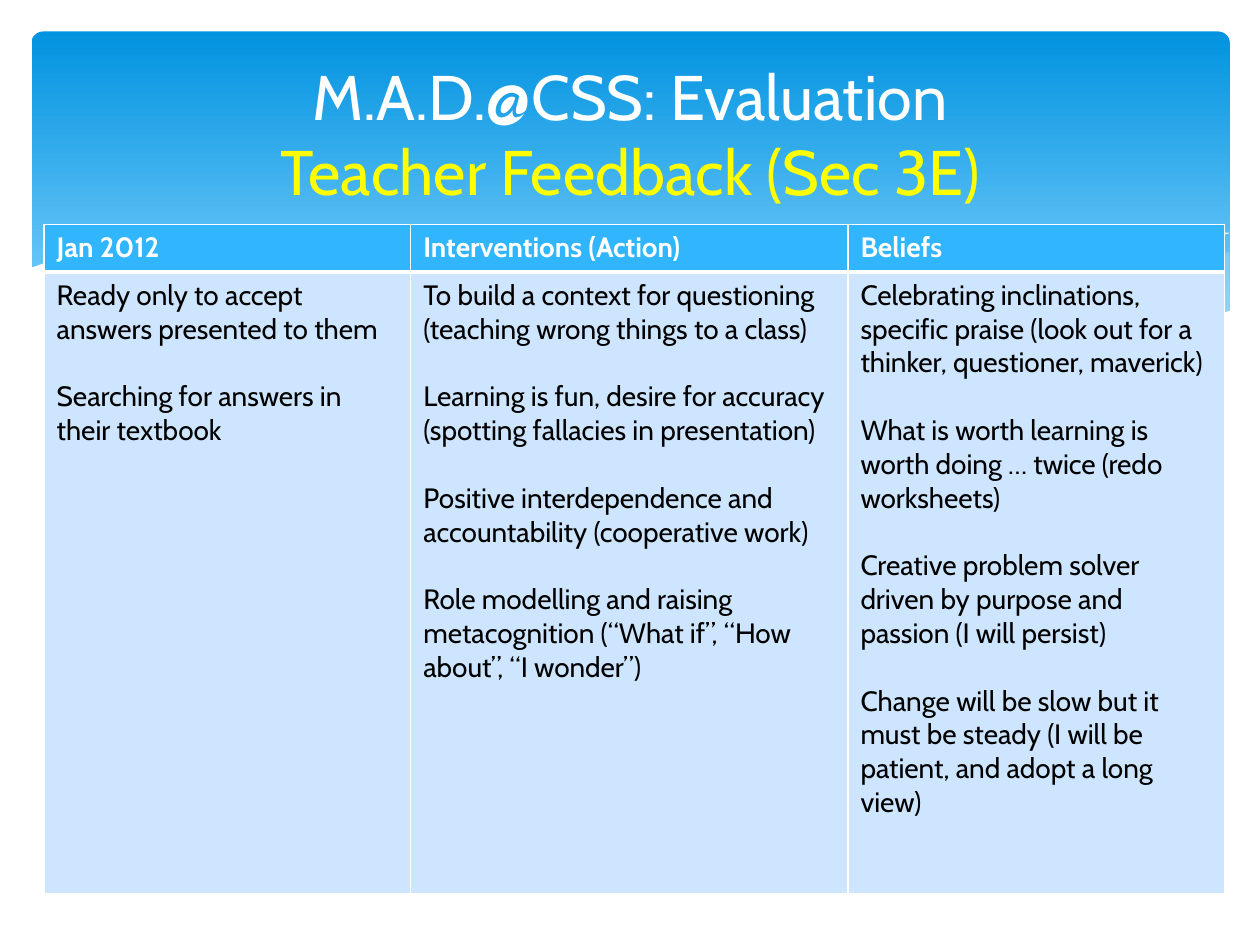
from lxml.etree import SubElement
from pptx import Presentation
from pptx.dml.color import RGBColor
from pptx.enum.shapes import MSO_SHAPE
from pptx.enum.text import MSO_ANCHOR, PP_ALIGN
from pptx.oxml import parse_xml
from pptx.oxml.ns import nsdecls, qn
from pptx.util import Inches, Pt

FONT = "Cabin"
WHITE, BLACK, PALE = "FFFFFF", "000000", "C6E7FC"

# Each wave: box on the slide, fill, opacity in percent, points in percent of the box.
# Waves without a fill are open white lines.
WAVES = [
    ((6.61, 2, 3.15, 0.78), PALE, 29,
     [(100, 0), (73, 21), (46, 47), (0, 83), (22, 94), (43, 99), (58, 99),
      (75, 90), (87, 79), (100, 60)]),
    ((2.86, 1.86, 6.06, 0.93), PALE, 40,
     [(100, 94), (81, 73), (57, 39), (40, 15), (26, 3), (15, 0), (0, 5),
      (13, 18), (27, 39), (46, 67), (60, 84), (74, 96), (88, 100)]),
    ((3.09, 1.87, 5.98, 0.85), None, 100,
     [(0, 9), (9, 2), (18, 0), (30, 4), (46, 15), (60, 31), (75, 54), (100, 100)]),
    ((6.13, 1.85, 3.62, 0.71), None, 100,
     [(0, 100), (30, 62), (62, 27), (86, 7), (100, 0)]),
    ((0.23, 1.84, 9.54, 1.45), WHITE, 100,
     [(100, 43), (95, 54), (89, 61), (82, 64), (74, 61), (63, 51), (53, 38),
      (44, 25), (36, 12), (26, 3), (18, 0), (10, 2), (5, 9), (0, 20),
      (0, 100), (100, 100)]),
]

COLS = [
    (2.91, "Jan 2012", [
        "Ready only to accept answers presented to them",
        "Searching for answers in their textbook"]),
    (3.47, "Interventions (Action)", [
        "To build a context for questioning (teaching wrong things to a class)",
        "Learning is fun, desire for accuracy (spotting fallacies in presentation)",
        "Positive interdependence and accountability (cooperative work)",
        "Role modelling and raising metacognition (“What if”, “How about”, “I wonder”)"]),
    (2.99, "Beliefs", [
        "Celebrating inclinations, specific praise (look out for a thinker, questioner, maverick)",
        "What is worth learning is worth doing … twice (redo worksheets)",
        "Creative problem solver driven by purpose and passion (I will persist)",
        "Change will be slow but it must be steady (I will be patient, and adopt a long view)"]),
]
ROWS = (0.38, 4.93)


def rgb(code):
    return RGBColor.from_string(code)


def add_run(para, text, size, color, bold=False):
    run = para.add_run()
    run.text = text
    font = run.font
    font.name, font.size, font.bold = FONT, Pt(size), bold
    font.color.rgb = rgb(color)


def add_panel(slide, box):
    panel = slide.shapes.add_shape(MSO_SHAPE.ROUNDED_RECTANGLE, *map(Inches, box))
    panel.adjustments[0] = 0.034
    panel.shadow.inherit = False
    panel.line.fill.background()
    panel.fill.gradient()
    panel.fill.gradient_angle = 270
    stops = panel.fill.gradient_stops
    for stop, place, color in zip(stops, (0, 0.9), ("0293E0", "83D3FE")):
        stop.position = place
        stop.color.rgb = rgb(color)


def add_wave(slide, box, color, alpha, points):
    left, top, width, height = map(Inches, box)
    spots = [(left + width * x / 100, top + height * y / 100) for x, y in points]
    pen = slide.shapes.build_freeform(*spots[0])
    pen.add_line_segments(spots[1:], close=color is not None)
    wave = pen.convert_to_shape()
    wave.shadow.inherit = False
    if color is None:
        wave.fill.background()
        wave.line.color.rgb = rgb(WHITE)
        wave.line.width = Pt(0)
        return
    wave.line.fill.background()
    wave.fill.solid()
    wave.fill.fore_color.rgb = rgb(color)
    if alpha < 100:
        tone = wave._element.spPr.find(qn("a:solidFill"))[0]
        SubElement(tone, qn("a:alpha")).set("val", str(alpha * 1000))


def add_title(slide, box):
    title = slide.shapes.title
    title.left, title.top, title.width, title.height = map(Inches, box)
    slide.shapes._spTree.append(title._element)  # bring in front of the waves
    frame = title.text_frame
    frame.word_wrap = True
    frame.vertical_anchor = MSO_ANCHOR.MIDDLE
    para = frame.paragraphs[0]
    para.alignment = PP_ALIGN.CENTER
    add_run(para, "M.A.D.@CSS: Evaluation", 36, WHITE)
    para.add_line_break()
    add_run(para, "Teacher Feedback (Sec 3E)", 36, "FFFF00")


def set_cell(cell, texts, fill, color, bold, edges):
    """Fill a cell; edges gives the white border widths in points by side."""
    cell.fill.solid()
    cell.fill.fore_color.rgb = rgb(fill)
    props = cell._tc.get_or_add_tcPr()
    for spot, (side, width) in enumerate(edges.items()):
        props.insert(spot, parse_xml(
            f'<a:ln{side} {nsdecls("a")} w="{Pt(width)}"><a:solidFill>'
            f'<a:srgbClr val="{WHITE}"/></a:solidFill></a:ln{side}>'))
    frame = cell.text_frame
    for num, text in enumerate(texts):
        para = frame.add_paragraph() if num else frame.paragraphs[0]
        if num:
            para.space_before = Pt(19.3)
        add_run(para, text, 16, color, bold)


def add_grid(slide, left, top):
    width = sum(col[0] for col in COLS)
    table = slide.shapes.add_table(
        len(ROWS), len(COLS), *map(Inches, (left, top, width, sum(ROWS)))).table
    for row, height in zip(table.rows, ROWS):
        row.height = Inches(height)
    for num, (span, head, body) in enumerate(COLS):
        table.columns[num].width = Inches(span)
        set_cell(table.cell(0, num), [head], "31B6FD", WHITE, True,
                 {"L": 1, "R": 1, "T": 1, "B": 3})
        set_cell(table.cell(1, num), body, "CDE5FE", BLACK, False,
                 {"L": 1, "R": 1, "T": 3, "B": 1})


def main():
    deck = Presentation()
    deck.slide_width, deck.slide_height = Inches(10), Inches(7.5)
    slide = deck.slides.add_slide(deck.slide_layouts[5])
    add_panel(slide, (0.25, 0.25, 9.51, 2.7))
    for wave in WAVES:
        add_wave(slide, *wave)
    add_title(slide, (0.5, 0.37, 9, 1.37))
    add_grid(slide, 0.35, 1.78)
    deck.save("out.pptx")


if __name__ == "__main__":
    main()
